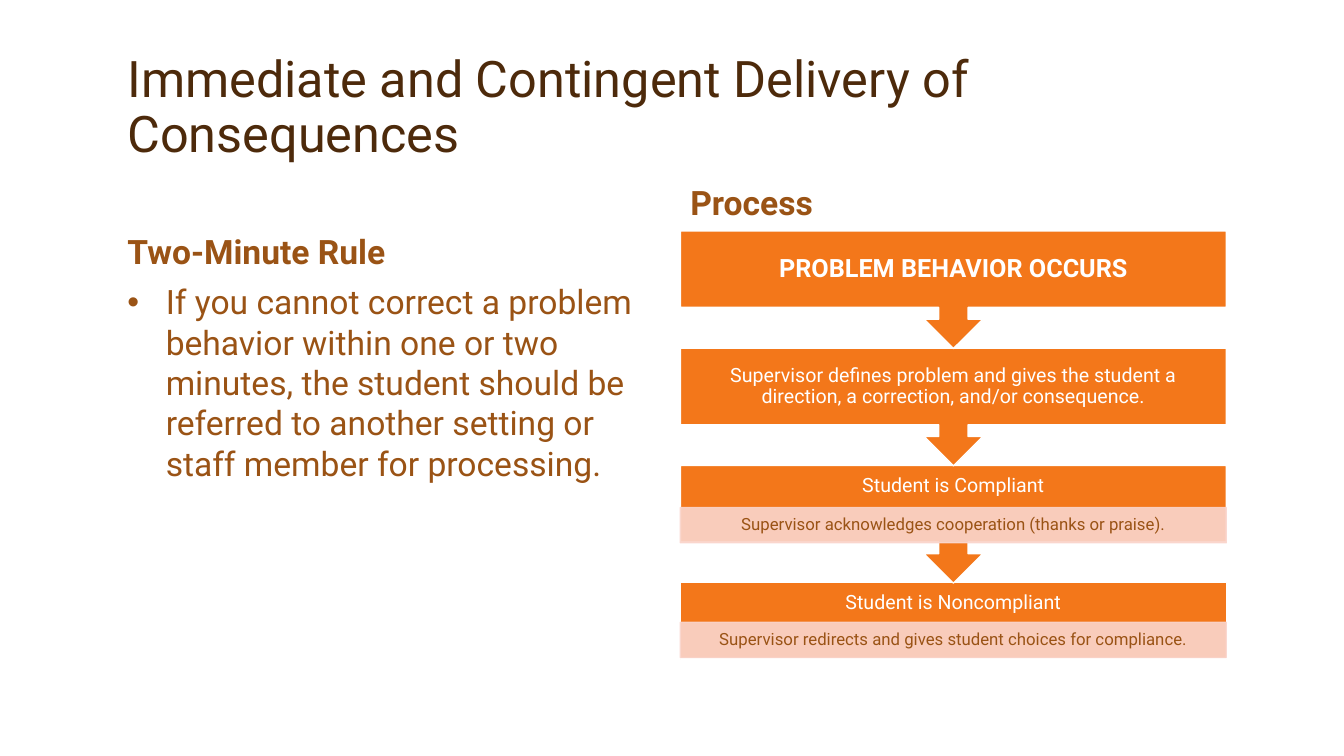
"""Build the slide on immediate and contingent delivery of consequences."""
from typing import NamedTuple

from lxml import etree
from pptx import Presentation
from pptx import util as u
from pptx.dml.color import RGBColor
from pptx.enum import shapes, text
from pptx.oxml import ns

SLIDE_WIDTH, SLIDE_HEIGHT = u.Inches(40 / 3), u.Inches(7.5)
COLUMN, ROW = SLIDE_WIDTH / 160, SLIDE_HEIGHT / 90
FONT = "Roboto"
COLOURS = {"title": "4D2A0B", "body": "9A5315", "step": "F3771A", "detail": "FAD6CD", "white": "FFFFFF"}

LEFT_COLUMN, PROCESS_COLUMN, TEXT_COLUMNS = 14, 81, 65
FIRST_STEP_ROW, STEP_PITCH = 27.5, 13.96
CALLOUT_ROWS, STEP_ROWS, HEADER_ROWS, DETAIL_ROWS = 14, 9.1, 4.9, 4.2


class Area(NamedTuple):
    """A place on the grid of columns and rows."""

    column: float
    row: float
    columns: float
    rows: float

    def emu(self) -> list[int]:
        """Return left, top, width and height in EMU."""
        return [round(n * size) for n, size in zip(self, (COLUMN, ROW, COLUMN, ROW))]


class TextBlock(NamedTuple):
    """A title, heading or body text on the slide."""

    words: str
    area: Area
    style: dict


class Step(NamedTuple):
    """One step of the process, with an optional detail strip."""

    label: str
    size: float = 14
    bold: bool = False
    inset: float = 0.11
    detail: str = ""
    detail_offset: float = 0


HEADING = {"bold": True, "anchor": text.MSO_ANCHOR.BOTTOM}
TEXT_BLOCKS = [
    TextBlock("Immediate and Contingent Delivery of Consequences", Area(LEFT_COLUMN, 4, 132, 16),
              {"size": 36, "colour": "title", "spacing": 0.9, "anchor": text.MSO_ANCHOR.BOTTOM}),
    TextBlock("Two-Minute Rule", Area(LEFT_COLUMN, 22.1, TEXT_COLUMNS, 10.8), HEADING),
    TextBlock("If you cannot correct a problem behavior within one or two minutes, the student should be "
              "referred to another setting or staff member for processing.",
              Area(LEFT_COLUMN, 32.9, TEXT_COLUMNS, 45.6), {"bullet": "•"}),
    TextBlock("Process", Area(PROCESS_COLUMN, 20.2, TEXT_COLUMNS, 6.8), HEADING),
]
STEPS = [
    Step("PROBLEM BEHAVIOR OCCURS", size=18, bold=True, inset=0.14),
    Step("Supervisor defines problem and gives the student a direction, a correction, and/or consequence."),
    Step("Student is Compliant", detail_offset=5,
         detail="Supervisor acknowledges cooperation (thanks or praise)."),
    Step("Student is Noncompliant", detail_offset=4.7,
         detail="Supervisor redirects and gives student choices for compliance."),
]


def write(shape, words: str, *, size: float = 24, colour: str = "body", bold: bool = False,
          anchor=text.MSO_ANCHOR.TOP, align=text.PP_ALIGN.LEFT, spacing: float = 1.0,
          insets: tuple[float, float] = (0.1, 0.05), bullet: str = "") -> None:
    """Put one formatted paragraph into a shape."""
    frame = shape.text_frame
    frame.word_wrap = True
    frame.vertical_anchor = anchor
    frame.margin_left = frame.margin_right = u.Inches(insets[0])
    frame.margin_top = frame.margin_bottom = u.Inches(insets[1])
    paragraph = frame.paragraphs[0]
    paragraph.text = words
    paragraph.alignment = align
    paragraph.line_spacing = spacing
    if bullet:
        properties = paragraph._p.get_or_add_pPr()
        properties.set("marL", str(u.Inches(0.38)))
        properties.set("indent", str(-u.Inches(0.38)))
        etree.SubElement(properties, ns.qn("a:buFont"), typeface="Arial")
        etree.SubElement(properties, ns.qn("a:buChar"), char=bullet)
    font = paragraph.runs[0].font
    font.name, font.size, font.bold = FONT, u.Pt(size), bold
    font.color.rgb = RGBColor.from_string(COLOURS[colour])


def add_block(slide, kind, area: Area, fill: str, line: str, opacity: int = 100):
    """Add a filled and outlined preset shape."""
    shape = slide.shapes.add_shape(kind, *area.emu())
    shape.shadow.inherit = False
    shape.fill.solid()
    shape.fill.fore_color.rgb = RGBColor.from_string(COLOURS[fill])
    shape.line.color.rgb = RGBColor.from_string(COLOURS[line])
    shape.line.width = u.Pt(1)
    if opacity < 100:
        for colour in shape._element.spPr.iter(ns.qn("a:srgbClr")):
            etree.SubElement(colour, ns.qn("a:alpha"), val=str(opacity * 1000))
    return shape


def add_step(slide, step: Step, row: float, is_last: bool) -> None:
    """Add one process step, with an arrow below unless it is the last."""
    kind = shapes.MSO_SHAPE.RECTANGLE if is_last else shapes.MSO_SHAPE.UP_ARROW_CALLOUT
    rows = STEP_ROWS if is_last else CALLOUT_ROWS
    block = add_block(slide, kind, Area(PROCESS_COLUMN, row, TEXT_COLUMNS, rows), "step", "white")
    block.rotation = 0 if is_last else 180
    centred = {"anchor": text.MSO_ANCHOR.MIDDLE, "align": text.PP_ALIGN.CENTER, "spacing": 0.9}
    label_rows = HEADER_ROWS if step.detail else STEP_ROWS
    label = slide.shapes.add_textbox(*Area(PROCESS_COLUMN, row, TEXT_COLUMNS, label_rows).emu())
    write(label, step.label, size=step.size, colour="white", bold=step.bold,
          insets=(step.inset, step.inset), **centred)
    if step.detail:
        area = Area(PROCESS_COLUMN, row + step.detail_offset, TEXT_COLUMNS, DETAIL_ROWS)
        strip = add_block(slide, shapes.MSO_SHAPE.RECTANGLE, area, "detail", "detail", opacity=90)
        write(strip, step.detail, size=12, insets=(0.09, 0.02), **centred)


def main() -> None:
    """Build and save the presentation."""
    presentation = Presentation()
    presentation.slide_width, presentation.slide_height = SLIDE_WIDTH, SLIDE_HEIGHT
    slide = presentation.slides.add_slide(presentation.slide_layouts[6])
    for block in TEXT_BLOCKS:
        write(slide.shapes.add_textbox(*block.area.emu()), block.words, **block.style)
    for index, step in reversed(list(enumerate(STEPS))):
        add_step(slide, step, FIRST_STEP_ROW + index * STEP_PITCH, index == len(STEPS) - 1)
    presentation.save("out.pptx")


if __name__ == "__main__":
    main()
